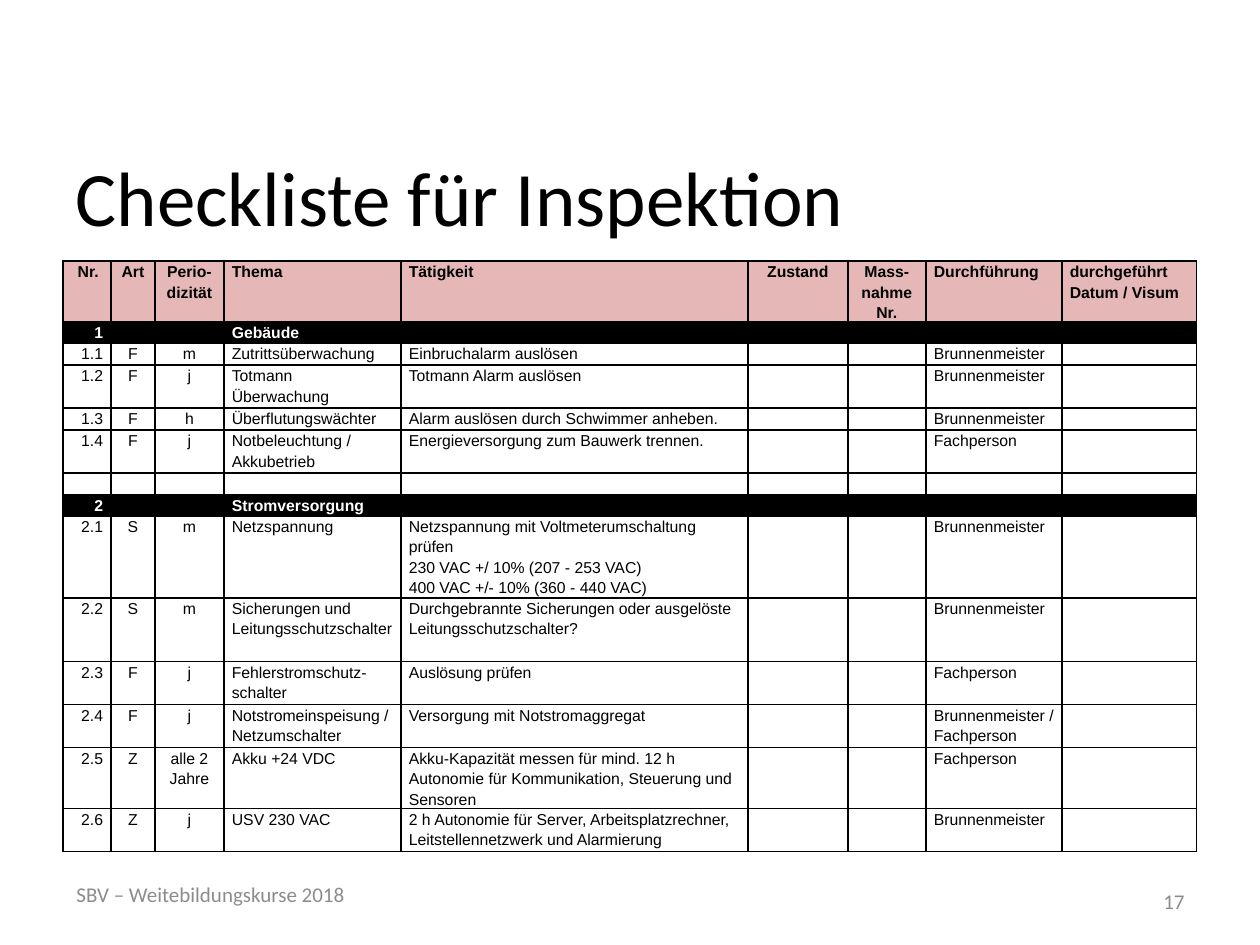
"""Build the inspection checklist slide."""
from dataclasses import dataclass
from typing import NamedTuple

from lxml.etree import SubElement
from pptx import Presentation
from pptx.dml.color import RGBColor
from pptx.enum.text import MSO_ANCHOR as Anchor, MSO_AUTO_SIZE as AutoSize, PP_ALIGN as Align
from pptx.oxml.ns import qn
from pptx.util import Emu, Pt

PX_PER_INCH = 126


@dataclass(frozen=True)
class Theme:
    ink: str = "000000"
    paper: str = "FFFFFF"
    header: str = "E5B8B7"
    muted: str = "8C8C8C"
    heading_font: str = "Calibri"
    table_font: str = "Arial"
    title_size: int = 44
    footer_size: int = 12
    table_size: int = 9
    line_spacing: float = 1.15
    border: int = 1


class Column(NamedTuple):
    heading: str
    width: int
    align: Align


class Entry(NamedTuple):
    height: int
    nr: str = ""
    art: str = ""
    period: str = ""
    topic: str = ""
    activity: str = ""
    executor: str = ""

    def texts(self) -> tuple[str, ...]:
        return (self.nr, self.art, self.period, self.topic, self.activity, "", "", self.executor, "")

    def is_section(self) -> bool:
        return bool(self.nr) and not self.art


class Footer(NamedTuple):
    text: str
    left: int
    top: int
    width: int
    height: int
    align: Align


THEME = Theme()
TABLE_LEFT, TABLE_TOP = 63, 261
HEADER_HEIGHT, CELL_INSET = 61, 8
COLUMNS = [
    Column("Nr. ", 48, Align.RIGHT),
    Column("Art", 44, Align.CENTER),
    Column("Perio-\vdizität", 69, Align.CENTER),
    Column("Thema", 177, Align.LEFT),
    Column("Tätigkeit", 347, Align.LEFT),
    Column("Zustand", 100, Align.CENTER),
    Column("Mass-\vnahme Nr.", 78, Align.CENTER),
    Column("Durchführung", 136, Align.LEFT),
    Column("durchgeführt Datum / Visum", 135, Align.LEFT),
]
ENTRIES = [
    Entry(21, "1", topic="Gebäude"),
    Entry(22, "1.1", "F", "m", "Zutrittsüberwachung", "Einbruchalarm auslösen", "Brunnenmeister"),
    Entry(43, "1.2", "F", "j", "Totmann Überwachung", "Totmann Alarm auslösen", "Brunnenmeister"),
    Entry(22, "1.3", "F", "h", "Überflutungswächter",
          "Alarm auslösen durch Schwimmer anheben.", "Brunnenmeister"),
    Entry(43, "1.4", "F", "j", "Notbeleuchtung / Akkubetrieb",
          "Energieversorgung zum Bauwerk trennen.", "Fachperson"),
    Entry(22),
    Entry(21, "2", topic="Stromversorgung"),
    Entry(82, "2.1", "S", "m", "Netzspannung",
          "Netzspannung mit Voltmeterumschaltung prüfen \v230 VAC +/ 10% (207 - 253 VAC)\n"
          "400 VAC +/- 10% (360 - 440 VAC)", "Brunnenmeister"),
    Entry(64, "2.2", "S", "m", "Sicherungen und Leitungsschutzschalter",
          "Durchgebrannte Sicherungen oder ausgelöste Leitungsschutzschalter?", "Brunnenmeister"),
    Entry(43, "2.3", "F", "j", "Fehlerstromschutz-schalter", "Auslösung prüfen", "Fachperson"),
    Entry(43, "2.4", "F", "j", "Notstromeinspeisung / Netzumschalter",
          "Versorgung mit Notstromaggregat", "Brunnenmeister / Fachperson"),
    Entry(61, "2.5", "Z", "alle 2 Jahre", "Akku +24 VDC",
          "Akku-Kapazität messen für mind. 12 h Autonomie für Kommunikation, Steuerung und Sensoren",
          "Fachperson"),
    Entry(43, "2.6", "Z", "j", "USV 230 VAC",
          "2 h Autonomie für Server, Arbeitsplatzrechner, Leitstellennetzwerk und Alarmierung",
          "Brunnenmeister"),
]
FOOTERS = [
    Footer("17", 903, 876, 294, 50, Align.RIGHT),
    Footer("SBV – Weitebildungskurse 2018", 64, 869, 357, 50, Align.LEFT),
]


def px(length: int) -> Emu:
    return Emu(round(length * 914400 / PX_PER_INCH))


def format_paragraph(paragraph, font: str, size: int, color: str, align: Align, bold: bool = False) -> None:
    paragraph.alignment = align
    paragraph.font.name = font
    paragraph.font.size = Pt(size)
    paragraph.font.bold = bold
    paragraph.font.color.rgb = RGBColor.from_string(color)


def draw_title(slide, text: str) -> None:
    title = slide.shapes.title
    title.left, title.top, title.width, title.height = px(63), px(116), px(1134), px(159)
    frame = title.text_frame
    frame.text = text
    frame.vertical_anchor = Anchor.MIDDLE
    frame.auto_size = AutoSize.NONE
    format_paragraph(frame.paragraphs[0], THEME.heading_font, THEME.title_size, THEME.ink, Align.LEFT)


def draw_footer(slide, footer: Footer) -> None:
    box = slide.shapes.add_textbox(px(footer.left), px(footer.top), px(footer.width), px(footer.height))
    frame = box.text_frame
    frame.word_wrap = True
    frame.vertical_anchor = Anchor.MIDDLE
    frame.text = footer.text
    format_paragraph(frame.paragraphs[0], THEME.heading_font, THEME.footer_size, THEME.muted, footer.align)


def add_borders(cell) -> None:
    properties = cell._tc.get_or_add_tcPr()
    for side in ("lnL", "lnR", "lnT", "lnB"):
        line = SubElement(properties, qn(f"a:{side}"), w=str(Pt(THEME.border)))
        SubElement(SubElement(line, qn("a:solidFill")), qn("a:srgbClr"), val=THEME.ink)


def fill_cell(cell, text: str, align: Align, color: str, fill: str | None, bold: bool) -> None:
    cell.margin_left = cell.margin_right = px(CELL_INSET)
    cell.margin_top = cell.margin_bottom = 0
    add_borders(cell)
    if fill:
        cell.fill.solid()
        cell.fill.fore_color.rgb = RGBColor.from_string(fill)
    else:
        cell.fill.background()
    cell.text = text
    for paragraph in cell.text_frame.paragraphs:
        paragraph.line_spacing = THEME.line_spacing
        format_paragraph(paragraph, THEME.table_font, THEME.table_size, color, align, bold)
        if not text:
            SubElement(paragraph._p, qn("a:endParaRPr"), sz=str(THEME.table_size * 100))


def draw_checklist(slide) -> None:
    heights = [HEADER_HEIGHT, *(entry.height for entry in ENTRIES)]
    width = sum(column.width for column in COLUMNS)
    checklist = slide.shapes.add_table(len(heights), len(COLUMNS), px(TABLE_LEFT), px(TABLE_TOP),
                                       px(width), px(sum(heights))).table
    checklist.first_row = checklist.horz_banding = False
    for grid_column, column in zip(checklist.columns, COLUMNS):
        grid_column.width = px(column.width)
    for row, height in zip(checklist.rows, heights):
        row.height = px(height)
    for index, column in enumerate(COLUMNS):
        fill_cell(checklist.cell(0, index), column.heading, column.align, THEME.ink, THEME.header, True)
    for row_index, entry in enumerate(ENTRIES, start=1):
        section = entry.is_section()
        color, fill = (THEME.paper, THEME.ink) if section else (THEME.ink, None)
        for index, (column, text) in enumerate(zip(COLUMNS, entry.texts())):
            fill_cell(checklist.cell(row_index, index), text, column.align, color, fill, section)


def main() -> None:
    deck = Presentation()
    deck.slide_width, deck.slide_height = px(1260), px(945)
    slide = deck.slides.add_slide(deck.slide_layouts[5])
    draw_title(slide, "Checkliste für Inspektion")
    draw_checklist(slide)
    for footer in FOOTERS:
        draw_footer(slide, footer)
    deck.save("out.pptx")


if __name__ == "__main__":
    main()
